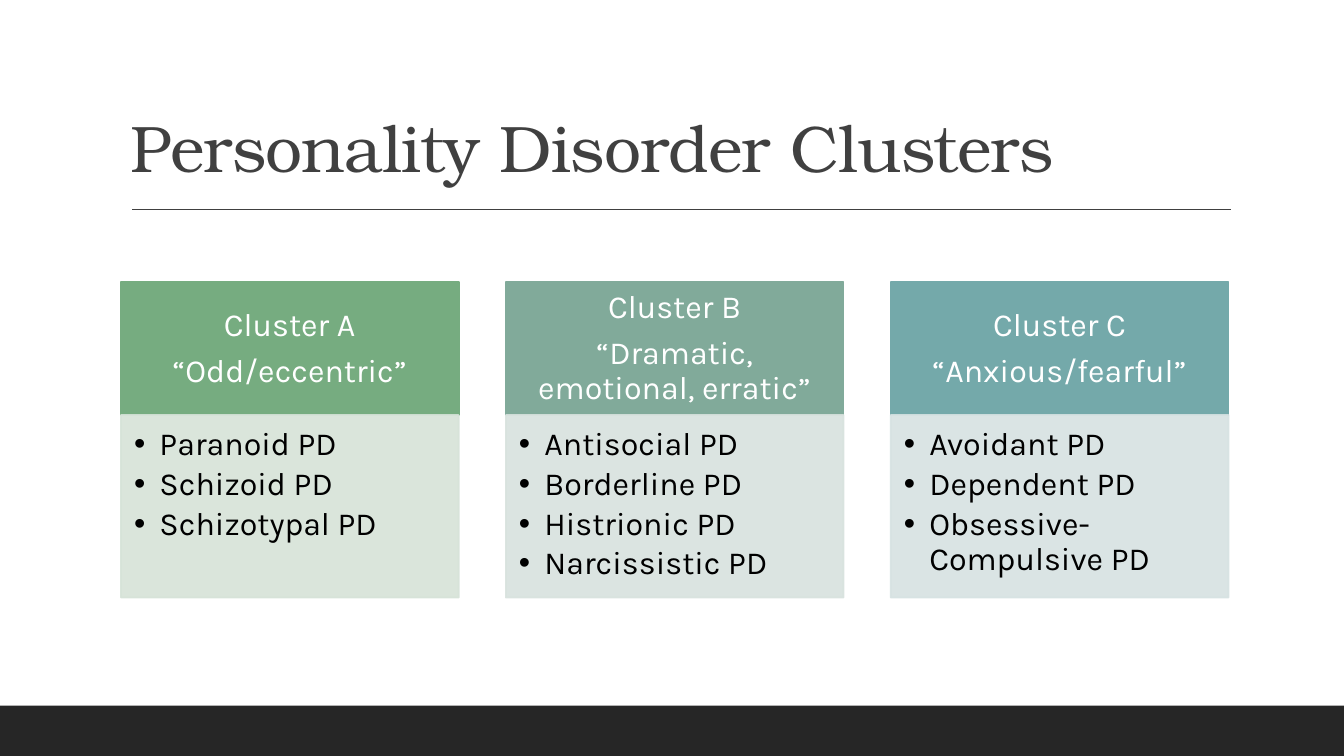
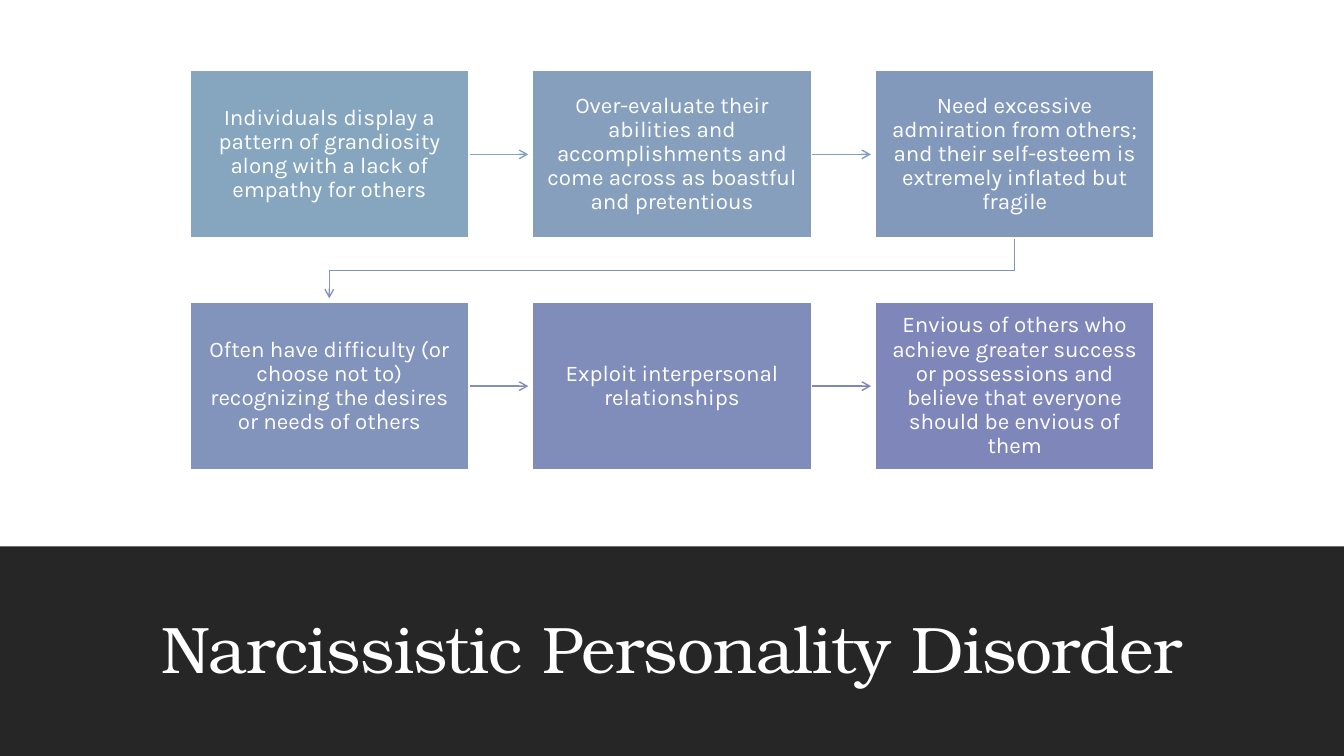
from collections import namedtuple
from itertools import pairwise

from lxml.etree import SubElement
from pptx import Presentation
from pptx.dml.color import RGBColor
from pptx.enum.shapes import MSO_CONNECTOR as LINK, MSO_SHAPE as SHAPE
from pptx.enum.text import MSO_ANCHOR as ANCHOR, MSO_AUTO_SIZE as FIT, PP_ALIGN as ALIGN
from pptx.oxml.ns import qn
from pptx.util import Cm, Pt

Box = namedtuple("Box", "left top width height")

PAGE_WIDTH, PAGE_HEIGHT = Cm(33.87), Cm(19.05)
WHITE, BLACK, INK, DARK = "FFFFFF", "000000", "404040", "262626"
BODY_FONT, TITLE_FONT = "Karla", "TeX Gyre Bonum"
TITLE_ONLY = 5

CLUSTERS = [
    (["Cluster A", "“Odd/eccentric”"], "76AC80", "D6E3D8",
     ["Paranoid PD", "Schizoid PD", "Schizotypal PD"]),
    (["Cluster B", "“Dramatic, emotional, erratic”"], "81AA9A", "D8E2DE",
     ["Antisocial PD", "Borderline PD", "Histrionic PD", "Narcissistic PD"]),
    (["Cluster C", "“Anxious/fearful”"], "74A9AA", "D6E2E2",
     ["Avoidant PD", "Dependent PD", "Obsessive-Compulsive PD"]),
]

# Each step: text, box colour, colour of the arrow that leaves it
STEPS = [
    ("Individuals display a pattern of grandiosity along with a lack of empathy for others",
     "86A5BE", "86A5BE"),
    ("Over-evaluate their abilities and accomplishments and come across as boastful "
     "and pretentious", "859FBD", "849EBD"),
    ("Need excessive admiration from others; and their self-esteem is extremely "
     "inflated but fragile", "8399BC", "8296BC"),
    ("Often have difficulty (or choose not to) recognizing the desires or needs of others",
     "8293BC", "818FBB"),
    ("Exploit interpersonal relationships", "808DBB", "7F87BA"),
    ("Envious of others who achieve greater success or possessions and believe that "
     "everyone should be envious of them", "7F87BA", None),
]


def color(hex_text):
    return RGBColor.from_string(hex_text)


def apply(target, formats):
    for name, value in formats.items():
        setattr(target, name, value)


def set_line(shape, hex_text, width):
    shape.line.color.rgb = color(hex_text)
    shape.line.width = Pt(width)


def add_block(page, box, fill, line=None):
    block = page.shapes.add_shape(SHAPE.RECTANGLE, *box)
    block.shadow.inherit = False
    block.fill.solid()
    block.fill.fore_color.rgb = color(fill)
    if line:
        set_line(block, line, 1.25)
    else:
        block.line.fill.background()
    return block


def fade(shape, percent):
    """Give the fill and the line of the shape this opacity."""
    for tint in shape.element.spPr.iter(qn("a:srgbClr")):
        SubElement(tint, qn("a:alpha"), val=str(percent * 1000))


def write(shape, lines, size, ink, margins, anchor=ANCHOR.MIDDLE, align=ALIGN.CENTER,
          font=BODY_FONT, space_after=0.0):
    """Fill the shape with one paragraph for each line; margins are in cm."""
    frame = shape.text_frame
    sides = ("margin_left", "margin_top", "margin_right", "margin_bottom")
    apply(frame, dict(zip(sides, map(Cm, margins))))
    apply(frame, {"word_wrap": True, "auto_size": FIT.NONE, "vertical_anchor": anchor})
    for number, line in enumerate(lines):
        para = frame.add_paragraph() if number else frame.paragraphs[0]
        apply(para, {"alignment": align, "line_spacing": 0.9,
                     "space_before": Pt(0), "space_after": Pt(space_after)})
        span = para.add_run()
        span.text = line
        apply(span.font, {"name": font, "size": Pt(size)})
        span.font.color.rgb = color(ink)


def add_bullets(shape, indent):
    for para in shape.text_frame.paragraphs:
        props = para._p.get_or_add_pPr()
        props.set("marL", str(indent))
        props.set("indent", str(-indent))
        SubElement(props, qn("a:buFont"), typeface="Arial")
        SubElement(props, qn("a:buChar"), char="•")


def add_link(page, start, end, ink):
    link = page.shapes.add_connector(LINK.STRAIGHT, *start, *end)
    set_line(link, ink, 1)
    SubElement(link.element.spPr, qn("a:effectLst"))
    return link


def add_arrowhead(shape):
    SubElement(shape.element.spPr.find(qn("a:ln")), qn("a:tailEnd"), type="arrow")


def add_page(deck, title, title_box, ink, align, band_top):
    """Start a slide with its title and a dark band down to the bottom edge."""
    page = deck.slides.add_slide(deck.slide_layouts[TITLE_ONLY])
    heading = page.shapes.title
    apply(heading, title_box._asdict())
    write(heading, [title], 47, ink, (0.25, 0.13, 0.25, 0.13),
          ANCHOR.BOTTOM, align, TITLE_FONT)
    heading.text_frame.paragraphs[0].runs[0].font._element.set("spc", "-50")
    band = add_block(page, Box(0, band_top, PAGE_WIDTH, PAGE_HEIGHT - band_top), DARK)
    heading.element.addprevious(band.element)
    return page


def add_cluster(page, box, cluster):
    names, strong, pale, disorders = cluster
    head_height = Cm(3.35)
    head = add_block(page, box._replace(height=head_height), strong, strong)
    write(head, names, 23, WHITE, (0.46, 0.25, 0.46, 0.25), space_after=8)
    body_box = box._replace(top=box.top + head_height, height=box.height - head_height)
    body = add_block(page, body_box, pale, pale)
    fade(body, 90)
    write(body, disorders, 23, BLACK, (0.33, 0.33, 0.46, 0.51),
          ANCHOR.TOP, ALIGN.LEFT, space_after=3.5)
    add_bullets(body, Cm(0.64))


def add_step_arrow(page, source, target, ink):
    """Lead across to the next box, or round to the start of the next row."""
    gap = Cm(0.1)
    if source.top == target.top:
        middle = source.top + source.height // 2
        arrow = add_link(page, (source.left + source.width, middle),
                         (target.left - gap, middle), ink)
    else:
        start_x = source.left + source.width // 2
        end_x = target.left + target.width // 2
        bottom = source.top + source.height
        turn = (bottom + target.top) // 2
        outline = page.shapes.build_freeform(start_x, bottom)
        outline.add_line_segments(
            [(start_x, turn), (end_x, turn), (end_x, target.top - gap)], close=False)
        arrow = outline.convert_to_shape()
        arrow.shadow.inherit = False
        arrow.fill.background()
        set_line(arrow, ink, 1)
    add_arrowhead(arrow)


def add_flow(page, area, columns=3, rows=2):
    width, height = Cm(7.04), Cm(4.22)
    step_x = (area.width - width) // (columns - 1)
    step_y = (area.height - height) // (rows - 1)
    boxes = [Box(area.left + column * step_x, area.top + row * step_y, width, height)
             for row in range(rows) for column in range(columns)]
    for (source, target), (_, _, ink) in zip(pairwise(boxes), STEPS):
        add_step_arrow(page, source, target, ink)
    for box, (text, fill, _) in zip(boxes, STEPS):
        block = add_block(page, box, fill, WHITE)
        write(block, [text], 16, WHITE, (0.36,) * 4)


def build_clusters(deck):
    page = add_page(deck, "Personality Disorder Clusters",
                    Box(Cm(3.05), Cm(0.79), Cm(27.94), Cm(4.04)),
                    INK, ALIGN.LEFT, Cm(17.78))
    add_link(page, (Cm(3.33), Cm(5.28)), (Cm(31.01), Cm(5.28)), INK)
    first = Box(Cm(3.05), Cm(7.11), Cm(8.51), Cm(7.95))
    for number, cluster in enumerate(CLUSTERS):
        add_cluster(page, first._replace(left=first.left + number * Cm(9.7)), cluster)


def build_narcissistic(deck):
    page = add_page(deck, "Narcissistic Personality Disorder",
                    Box(Cm(2.97), Cm(14.58), Cm(27.94), Cm(2.87)),
                    WHITE, ALIGN.CENTER, Cm(13.77))
    add_flow(page, Box(Cm(4.78), Cm(1.78), Cm(24.31), Cm(10.06)))


def main():
    deck = Presentation()
    apply(deck, {"slide_width": PAGE_WIDTH, "slide_height": PAGE_HEIGHT})
    build_clusters(deck)
    build_narcissistic(deck)
    deck.save("out.pptx")


if __name__ == "__main__":
    main()
